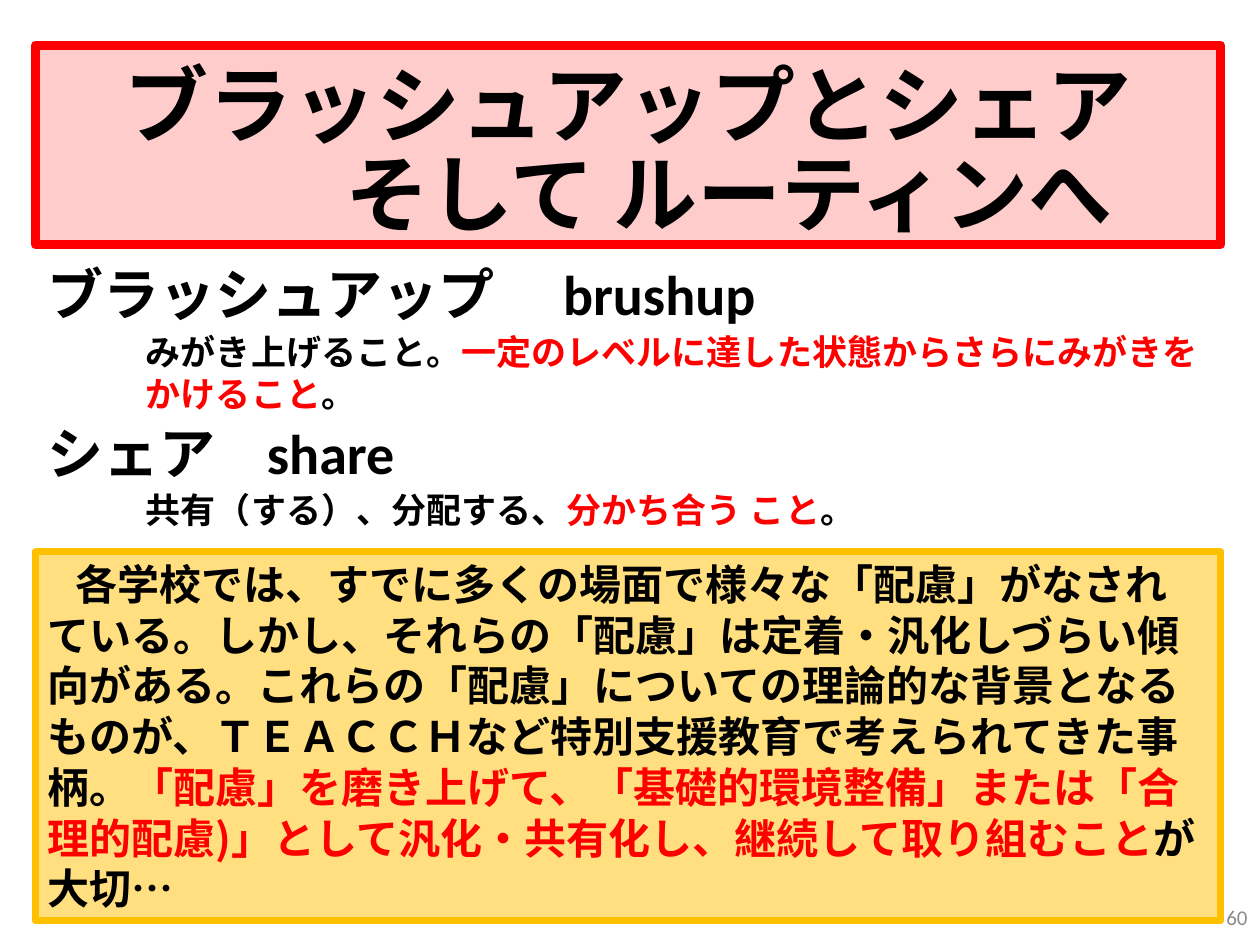
from pptx import Presentation
from pptx.dml.color import RGBColor
from pptx.enum.shapes import MSO_SHAPE as Shape
from pptx.enum.text import MSO_ANCHOR as Anchor, PP_ALIGN as Align
from pptx.oxml.ns import qn
from pptx.util import Inches, Pt
from lxml.etree import SubElement as Sub

BLACK = RGBColor(0x00, 0x00, 0x00)
RED = RGBColor(0xFF, 0x00, 0x00)
GOLD = RGBColor(0xFF, 0xC0, 0x00)
GRAY = RGBColor(0x8C, 0x8C, 0x8C)
KANA = "Noto Sans CJK JP"
LATIN = "Calibri"
LEFT, WIDE = 0.28, 9.41


def write(shape, runs, size, align=Align.LEFT, font=KANA, bold=True):
    frame = shape.text_frame
    frame.word_wrap = True
    frame.vertical_anchor = Anchor.TOP
    para = frame.paragraphs[0]
    para.alignment = align
    para.line_spacing = Pt(round(size * 1.2))
    para.font.size = Pt(size)
    para.font.bold = bold
    para.font.name = font
    for text, color in runs:
        run = para.add_run()
        run.text = text
        run.font.color.rgb = color
        Sub(run.font._element, qn("a:ea")).set("typeface", KANA)
    return para


def label(slide, box, runs, size, **style):
    shape = slide.shapes.add_textbox(*map(Inches, box))
    return write(shape, runs, size, **style)


def panel(slide, box, color, alpha, width):
    shape = slide.shapes.add_shape(Shape.RECTANGLE, *map(Inches, box))
    shape.shadow.inherit = False
    shape.fill.solid()
    shape.fill.fore_color.rgb = color
    fill = shape._element.spPr.find(qn("a:solidFill"))
    Sub(fill[0], qn("a:alpha")).set("val", str(alpha * 1000))
    shape.line.color.rgb = color
    shape.line.width = Pt(width)
    return shape


def title(slide, box):
    x, y, w, h = box
    shape = panel(slide, box, RED, 20, 5)
    write(shape, [("ブラッシュアップとシェア", BLACK)], 48, Align.CENTER)
    label(slide, (x + 2.36, y + 0.71, w - 2.4, 0.91),
          [("そして ルーティンへ", BLACK)], 48)


def term(slide, box, word, gloss, tab, runs):
    x, y, w, h = box
    para = label(slide, (x, y, w, 0.64),
                 [(word + "\t", BLACK), (gloss, BLACK)], 32)
    para.runs[1].font.name = LATIN
    tabs = Sub(para._p.pPr, qn("a:tabLst"))
    para._p.pPr.find(qn("a:defRPr")).addprevious(tabs)
    stop = Sub(tabs, qn("a:tab"))
    stop.set("pos", str(Inches(tab)))
    stop.set("algn", "l")
    label(slide, (x + 0.78, y + 0.55, w - 0.78, h - 0.55), runs, 20)


def summary(slide, box):
    shape = panel(slide, box, GOLD, 50, 4)
    para = write(shape, [
        ("各学校では、すでに多くの場面で様々な「配慮」がなされている。"
         "しかし、それらの「配慮」は定着・汎化しづらい傾向がある。"
         "これらの「配慮」についての理論的な背景となるものが、"
         "ＴＥＡＣＣＨなど特別支援教育で考えられてきた事柄。", BLACK),
        ("「配慮」を磨き上げて、「基礎的環境整備」または「合理的配慮)」"
         "として汎化・共有化し、継続して取り組むこと", RED),
        ("が大切…", BLACK)], 24)
    para._p.pPr.set("indent", str(Inches(0.22)))


def main():
    deck = Presentation()
    deck.slide_width, deck.slide_height = Inches(10), Inches(7.5)
    slide = deck.slides.add_slide(deck.slide_layouts[6])
    term(slide, (LEFT, 2.02, WIDE, 1.32), "ブラッシュアップ", "brushup", 4.09, [
        ("みがき上げること。", BLACK),
        ("一定のレベルに達した状態からさらにみがきをかけること", RED),
        ("。", BLACK)])
    term(slide, (LEFT, 3.28, WIDE, 0.99), "シェア", "share", 1.74, [
        ("共有（する）、分配する、", BLACK),
        ("分かち合う こと", RED),
        ("。", BLACK)])
    title(slide, (LEFT, 0.36, WIDE, 1.58))
    summary(slide, (LEFT, 4.38, WIDE, 2.93))
    page = label(slide, (7.47, 7.13, 2.53, 0.3), [("60", GRAY)], 12,
                 align=Align.RIGHT, font=LATIN, bold=False)
    page.line_spacing = 1.0
    deck.save("out.pptx")


if __name__ == "__main__":
    main()
